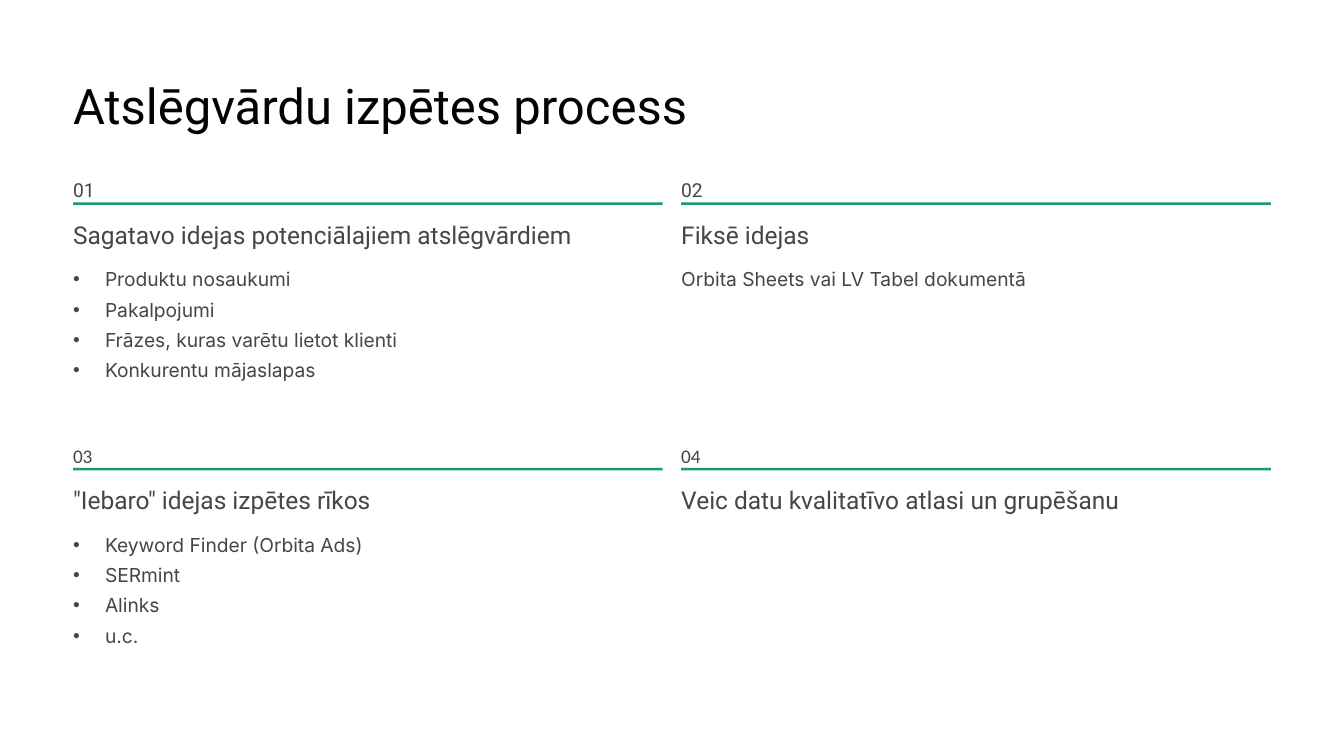
from lxml.etree import SubElement
from pptx import Presentation
from pptx.dml.color import RGBColor
from pptx.enum.shapes import MSO_SHAPE as Shape
from pptx.enum.text import MSO_ANCHOR as Anchor, MSO_AUTO_SIZE as AutoSize, PP_ALIGN as Align
from pptx.oxml.ns import qn
from pptx.util import Inches, Pt

INK = RGBColor(0x03, 0x03, 0x03)
GREY = RGBColor(0x46, 0x46, 0x46)
GREEN = RGBColor(0x1C, 0x97, 0x70)

MARGIN, TOP = 0.87, 2.04
COLUMN_WIDTH, COLUMN_STEP, ROW_STEP = 7.02, 7.24, 3.16
RULE_DROP, HEADING_DROP, BODY_DROP = 0.37, 0.56, 1.06
INDENT = 0.38

STEPS = [
    ("Sagatavo idejas potenciālajiem atslēgvārdiem",
     ["Produktu nosaukumi", "Pakalpojumi",
      "Frāzes, kuras varētu lietot klienti", "Konkurentu mājaslapas"]),
    ("Fiksē idejas", "Orbita Sheets vai LV Tabel dokumentā"),
    ('"Iebaro" idejas izpētes rīkos',
     ["Keyword Finder (Orbita Ads)", "SERmint", "Alinks", "u.c."]),
    ("Veic datu kvalitatīvo atlasi un grupēšanu", None),
]


def place(box, left, top, width, height):
    """Move a shape to a position given in inches."""
    box.left, box.top = Inches(left), Inches(top)
    box.width, box.height = Inches(width), Inches(height)


def add_bullet(para):
    """Give a paragraph a hanging round bullet."""
    properties = para._p.get_or_add_pPr()
    properties.set("marL", str(Inches(INDENT)))
    properties.set("indent", str(-Inches(INDENT)))
    SubElement(properties, qn("a:buChar")).set("char", "•")


def write(box, *lines, size=16.5, leading=26, font="Roboto", color=GREY, bullets=False):
    """Fill a box with one formatted paragraph per line."""
    frame = box.text_frame
    frame.margin_left = frame.margin_top = frame.margin_right = frame.margin_bottom = 0
    frame.word_wrap = True
    frame.auto_size = AutoSize.NONE
    frame.vertical_anchor = Anchor.TOP
    for index, line in enumerate(lines):
        para = frame.add_paragraph() if index else frame.paragraphs[0]
        if bullets:
            add_bullet(para)
        para.alignment = Align.LEFT
        para.line_spacing = Pt(leading)
        para.space_before = Pt(0)
        span = para.add_run()
        span.text = line
        span.font.size = Pt(size)
        span.font.name = font
        span.font.color.rgb = color


def add_text(page, text, left, top, width, height, **style):
    """Add a text box with one line of text."""
    box = page.shapes.add_textbox(0, 0, 0, 0)
    place(box, left, top, width, height)
    write(box, text, **style)


def add_rule(page, left, top):
    """Add the green rule over a step."""
    rule = page.shapes.add_shape(Shape.RECTANGLE, 0, 0, 0, 0)
    place(rule, left, top, COLUMN_WIDTH, 0.03)
    rule.shadow.inherit = False
    rule.fill.solid()
    rule.fill.fore_color.rgb = GREEN
    rule.line.fill.background()


def add_step(page, index, heading, body, lists):
    """Add one numbered step in its cell of the two by two grid."""
    row, column = divmod(index, 2)
    left, top = MARGIN + column * COLUMN_STEP, TOP + row * ROW_STEP
    add_text(page, f"{index + 1:02}", left, top, 0.5, 0.29,
             font="Calibri" if row else "Roboto")
    add_rule(page, left, top + RULE_DROP)
    add_text(page, heading, left, top + HEADING_DROP, COLUMN_WIDTH, 0.37,
             size=21, leading=26.5)
    if isinstance(body, list):
        box = next(lists)
        place(box, left, top + BODY_DROP, COLUMN_WIDTH, 1.71)
        write(box, *body, font="Inter", bullets=True)
    elif body:
        add_text(page, body, left, top + BODY_DROP, COLUMN_WIDTH, 0.37, font="Inter")


def main():
    """Build the slide and save it."""
    deck = Presentation()
    deck.slide_width, deck.slide_height = Inches(16), Inches(9)
    page = deck.slides.add_slide(deck.slide_layouts.get_by_name("Two Content"))
    title, *bodies = page.placeholders
    place(title, MARGIN, 0.86, 2 * COLUMN_WIDTH, 0.74)
    write(title, "Atslēgvārdu izpētes process", size=42, leading=53, color=INK)
    lists = iter(bodies)
    for index, (heading, body) in enumerate(STEPS):
        add_step(page, index, heading, body, lists)
    deck.save("out.pptx")


if __name__ == "__main__":
    main()
